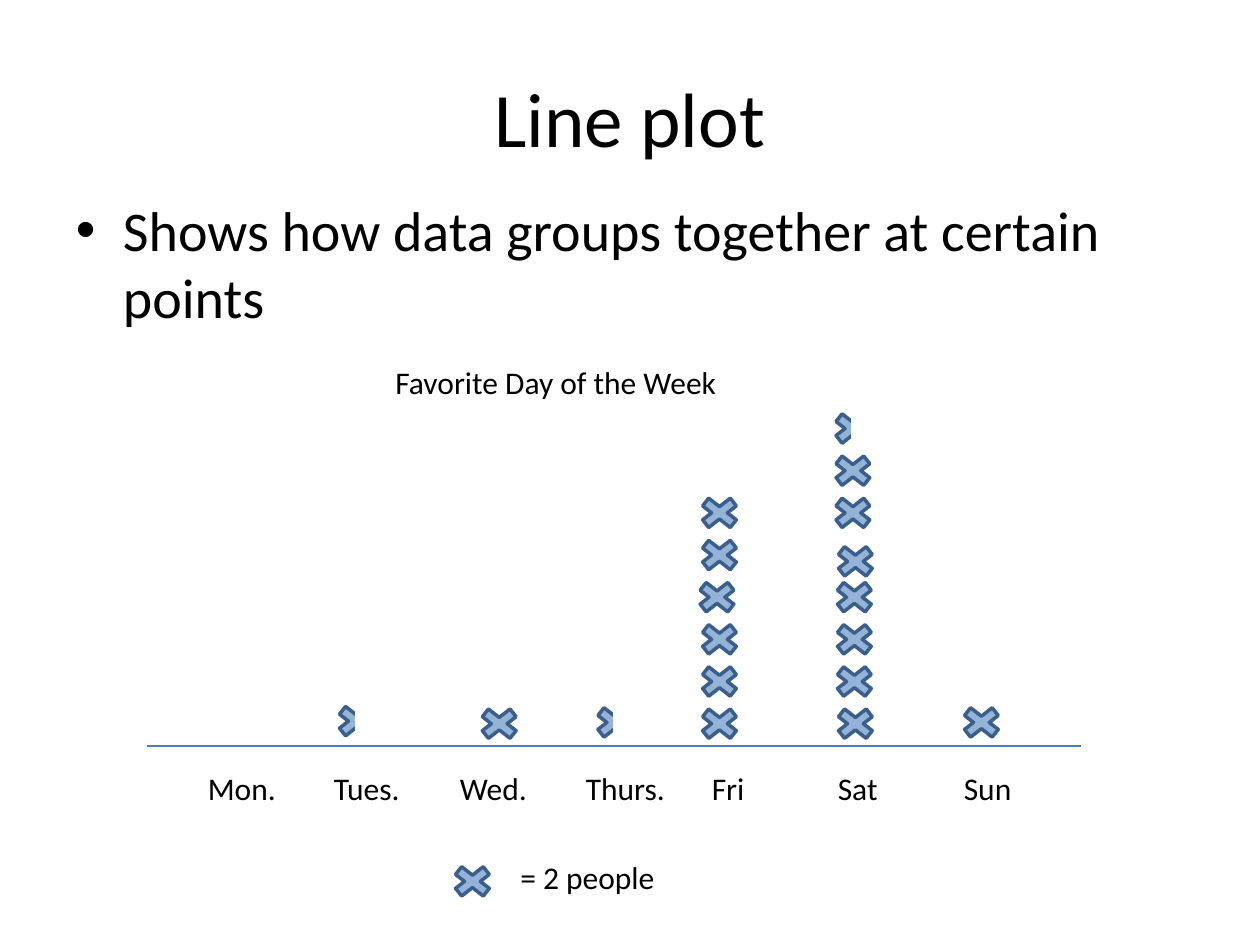
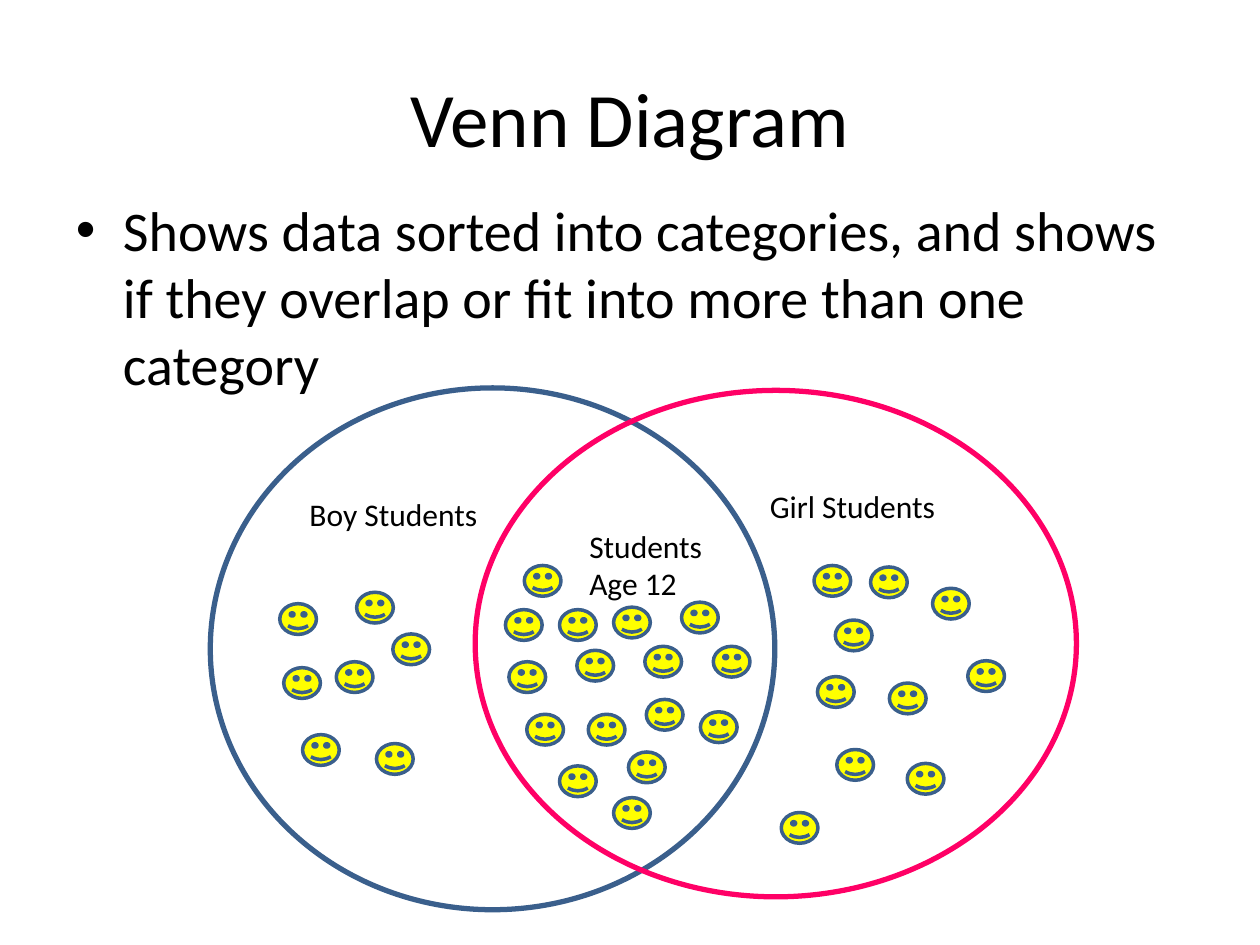
"""Build two slides on ways to show data: a line plot and a Venn diagram."""
from lxml.etree import SubElement as Sub
from pptx import Presentation as Deck
from pptx.dml.color import RGBColor as Rgb
from pptx.enum.shapes import MSO_CONNECTOR as Link, MSO_SHAPE as Kind
from pptx.enum.text import MSO_ANCHOR as Anchor, PP_ALIGN as Align
from pptx.oxml.ns import qn
from pptx.util import Cm, Pt

HUES = {"ink": "000000", "paper": "FFFFFF", "mark": "95B3D7", "edge": "3A5F8C",
        "axis": "4B7EBC", "face": "FFFF00", "girl": "FF0066"}
FONT = "Calibri"


def put(slide, kind, at, fill, line, width=2):
    """Add a preset shape; a fill of None leaves it hollow."""
    shape = slide.shapes.add_shape(kind, *map(Cm, at))
    shape.shadow.inherit = False
    if fill:
        shape.fill.solid()
        shape.fill.fore_color.rgb = Rgb.from_string(HUES[fill])
    else:
        shape.fill.background()
    shape.line.color.rgb = Rgb.from_string(HUES[line])
    shape.line.width = Pt(width)


def say(slide, at, lines, size=18, dot=False, tabs=()):
    """Add a text box with one paragraph per line and return its frame."""
    frame = slide.shapes.add_textbox(*map(Cm, at)).text_frame
    frame.word_wrap = True
    for i, line in enumerate(lines):
        para = frame.paragraphs[0] if i == 0 else frame.add_paragraph()
        props = para._p.get_or_add_pPr()
        if dot:
            props.set("marL", str(Cm(0.95)))
            props.set("indent", str(Cm(-0.95)))
            Sub(props, qn("a:buFont"), typeface="Arial")
            Sub(props, qn("a:buChar"), char="•")
        if tabs:
            stops = Sub(props, qn("a:tabLst"))
            for tab in tabs:
                Sub(stops, qn("a:tab"), pos=str(Cm(tab)), algn="l")
        run = para.add_run()
        run.text = line
        run.font.name = FONT
        run.font.size = Pt(size)
        run.font.color.rgb = Rgb.from_string(HUES["ink"])
    return frame


deck = Deck()
deck.slide_width, deck.slide_height = Cm(25.4), Cm(19.05)

pages = []
for title, point in [
    ("Line plot", "Shows how data groups together at certain points"),
    ("Venn Diagram", "Shows data sorted into categories, and shows if they "
                     "overlap or fit into more than one category"),
]:
    page = deck.slides.add_slide(deck.slide_layouts[6])
    head = say(page, (1.27, 0.76, 22.86, 3.18), [title], 44)
    head.vertical_anchor = Anchor.MIDDLE
    head.paragraphs[0].alignment = Align.CENTER
    say(page, (1.28, 3.81, 22.86, 12.57), [point], 32, dot=True)
    pages.append(page)
plot, venn = pages

axis = plot.shapes.add_connector(Link.STRAIGHT, Cm(2.97), Cm(15.04), Cm(21.79), Cm(15.04))
axis.line.color.rgb = Rgb.from_string(HUES["axis"])
axis.line.width = Pt(0.75)
Sub(axis._element.spPr, qn("a:effectLst"))

days = ["Mon.", "Tues.", "Wed.", "Thurs.", "Fri", "Sat", "Sun"]
say(plot, (3.94, 15.37, 16.87, 1.02), ["\t".join(days)],
    tabs=[2.54 * i for i in range(1, len(days))])

BASE, STEP, WIDE, HIGH = 14.17, 0.85, 1.07, 0.84
fri = [(13.92 if row == 3 else 13.97, row) for row in range(6)]
sat = [(16.71, 0), (16.69, 1), (16.69, 2), (16.69, 3), (16.71, 3.85), (16.66, 5), (16.66, 6)]
rest = [(9.53, 0), (19.25, 0.03), (8.99, -3.74)]
halves = [(16.66, 7), (6.65, 0.06), (11.86, 0.03)]
for x, row in fri + sat + rest + halves:
    put(plot, Kind.MATH_MULTIPLY, (x, BASE - STEP * row, WIDE, HIGH), "mark", "edge")
for x, row in halves:
    top = BASE - STEP * row - 0.43
    put(plot, Kind.RECTANGLE, (x + WIDE / 2, top, WIDE / 2, 1.27), "paper", "paper")

say(plot, (10.24, 17.17, 3.25, 1.02), ["= 2 people"])
say(plot, (7.72, 7.19, 7.06, 1.02), ["Favorite Day of the Week"])

put(venn, Kind.OVAL, (4.24, 7.82, 11.38, 10.52), None, "edge", 3)
put(venn, Kind.OVAL, (9.58, 7.87, 12.12, 10.21), None, "girl", 3)
say(venn, (5.99, 9.86, 3.94, 1.02), ["Boy Students"])
say(venn, (15.27, 9.7, 3.89, 1.8), ["Girl Students"])
say(venn, (11.63, 10.49, 2.82, 1.8), ["Students", "Age 12"])

both = [(10.19, 12.29), (11.28, 12.29), (12.37, 12.24), (13.74, 12.14),
        (10.26, 13.34), (11.63, 13.11), (13, 13.03), (14.38, 13.03),
        (10.62, 14.4), (11.86, 14.4), (13.03, 14.1), (14.12, 14.35),
        (10.57, 11.4), (11.28, 15.44), (12.67, 15.16), (12.37, 16.08)]
boys = [(5.64, 12.17), (7.19, 11.94), (6.78, 13.34), (5.72, 13.46),
        (6.1, 14.81), (7.59, 14.99), (7.92, 12.78)]
girls = [(16.41, 11.4), (17.55, 11.43), (16.48, 13.64), (17.93, 13.77),
         (18.8, 11.86), (15.75, 16.38), (16.84, 12.5), (16.87, 15.11),
         (18.29, 15.39), (19.51, 13.32)]
for x, y in both + boys + girls:
    put(venn, Kind.SMILEY_FACE, (x, y, 0.74, 0.62), "face", "edge")

deck.save("out.pptx")
